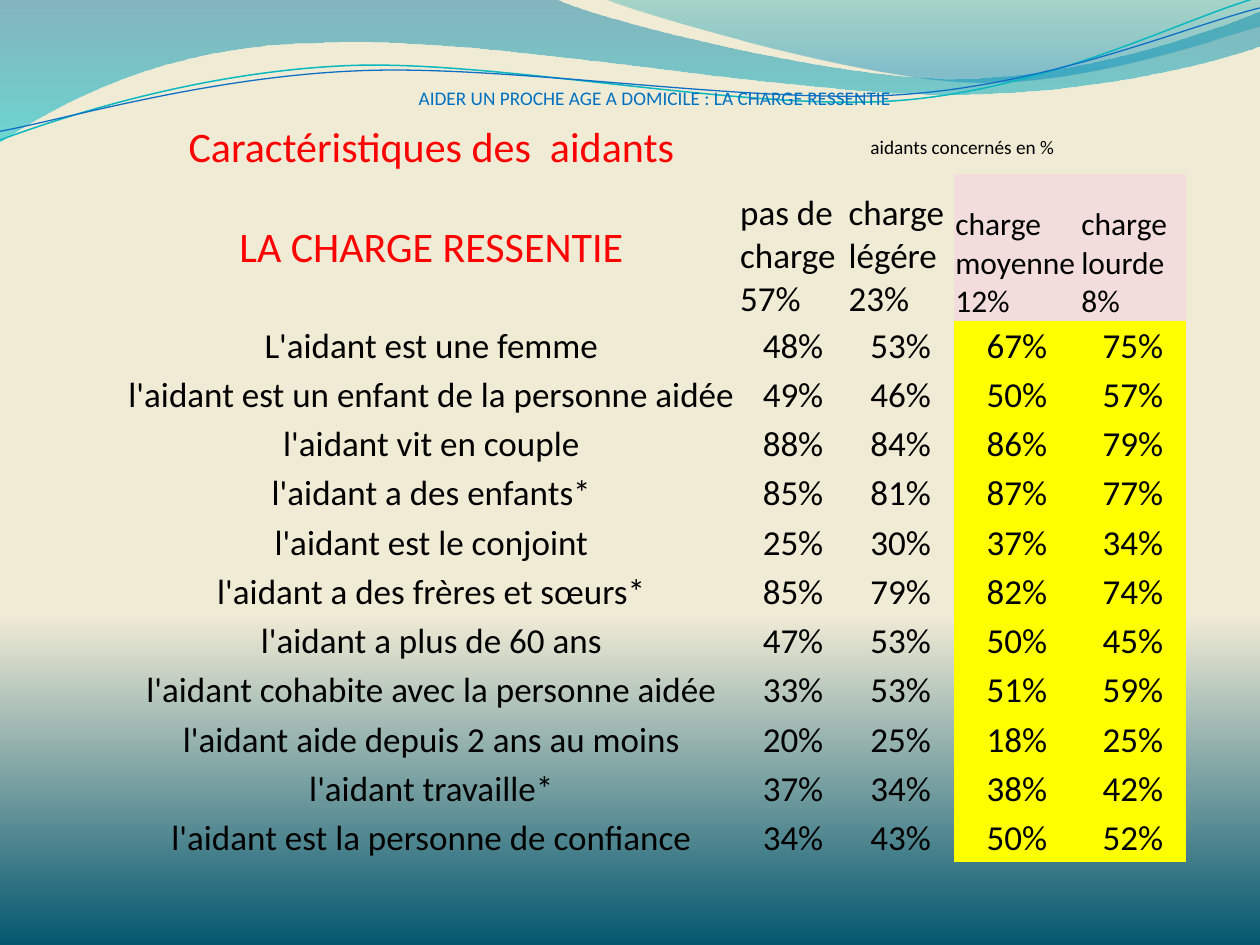
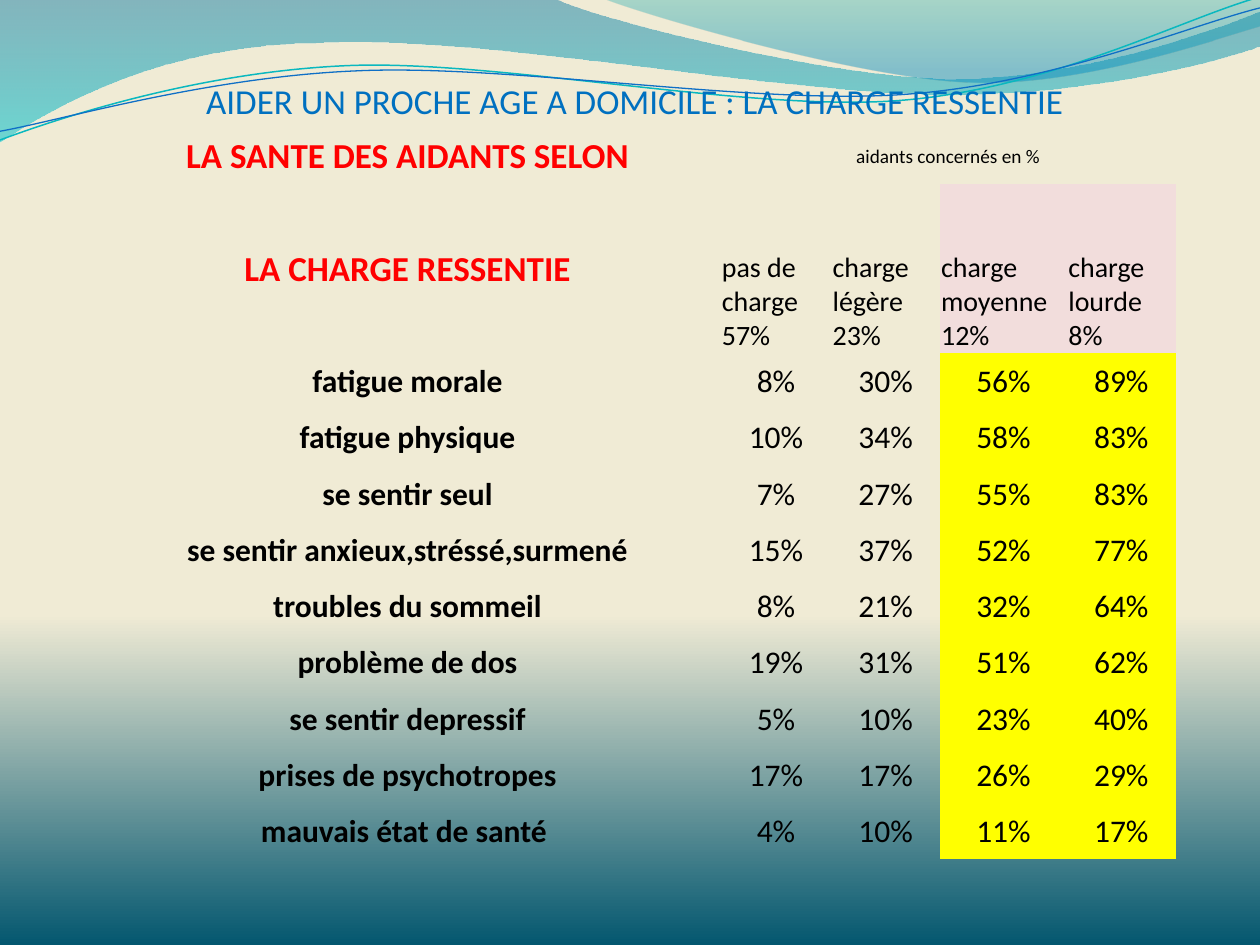
from pptx import Presentation
from pptx import oxml
from pptx.dml.color import RGBColor
from pptx.enum import text as t
from pptx.util import Pt

THEME = {
    "font": "Calibri", "note_size": 11,
    "black": "000000", "title": "0070C0", "heading": "FF0000",
    "header_fill": "F2DDDC", "value_fill": "FFFF00",
    "background": [(0, "F0EBD5", 100), (65, "F0EBD5", 100), (100, "04576F", 100)],
    "wave": [(0, "0074A1", 45), (100, "00C6CF", 55)],
    "fan": [(0, "00A1A9", 30), (80, "008BBF", 45), (100, "008BBF", 45)],
    "upper_line": ("0AB8BF", 0.85), "lower_line": ("0F6FC6", 0.75),
}

TITLE = "AIDER UN PROCHE AGE A DOMICILE : LA CHARGE RESSENTIE"
NOTE = "aidants concernés en %"

TABLES = [
    {
        "left": 70.8, "columns": [351.4, 62, 61, 72, 60.5],
        "rows": (26, 28, 84.3, 28.13), "bold": False,
        "sizes": {"title": 11, "heading": 24, "headers": [20, 20, 18, 18], "body": 20},
        "headings": ["Caractéristiques des  aidants", "LA CHARGE RESSENTIE"],
        "headers": ["pas de charge 57%", "charge légére 23%",
                    "charge moyenne 12%", "charge lourde 8%"],
        "body": [
            ("L'aidant est une femme", 48, 53, 67, 75),
            ("l'aidant est un enfant de la personne aidée", 49, 46, 50, 57),
            ("l'aidant vit en couple", 88, 84, 86, 79),
            ("l'aidant a des enfants*", 85, 81, 87, 77),
            ("l'aidant est le conjoint", 25, 30, 37, 34),
            ("l'aidant a des frères et sœurs*", 85, 79, 82, 74),
            ("l'aidant a plus de 60 ans", 47, 53, 50, 45),
            ("l'aidant cohabite avec la personne aidée", 33, 53, 51, 59),
            ("l'aidant aide depuis 2 ans au moins", 20, 25, 18, 25),
            ("l'aidant travaille*", 37, 34, 38, 42),
            ("l'aidant est la personne de confiance", 34, 43, 50, 52),
        ],
    },
    {
        "left": 54, "columns": [357.8, 63.3, 62, 72.7, 62],
        "rows": (30, 32.2, 96.4, 32.15), "bold": True,
        "sizes": {"title": 20, "heading": 20, "headers": [16] * 4, "body": 18},
        "headings": ["LA SANTE DES AIDANTS SELON", "LA CHARGE RESSENTIE"],
        "headers": ["pas de charge 57%", "charge légère 23%",
                    "charge moyenne 12%", "charge lourde 8%"],
        "body": [
            ("fatigue morale", 8, 30, 56, 89),
            ("fatigue physique", 10, 34, 58, 83),
            ("se sentir seul", 7, 27, 55, 83),
            ("se sentir anxieux,stréssé,surmené", 15, 37, 52, 77),
            ("troubles du sommeil", 8, 21, 32, 64),
            ("problème de dos", 19, 31, 51, 62),
            ("se sentir depressif", 5, 10, 23, 40),
            ("prises de psychotropes", 17, 17, 26, 29),
            ("mauvais état de santé ", 4, 10, 11, 17),
        ],
    },
]
TABLE_TOP = 43.2

BANDS = [
    ("wave", [(0, -0.7), (317, -0.7), (343, 12, 478, 45, 546, 45),
              (614, 45, 690, 19, 720, 6.5), (720.7, 26), (708, 32, 626, 55, 537, 54),
              (447, 54, 275, 20, 185, 24.5), (93, 25, 33, 60, -0.7, 81.4)]),
    ("fan", [(345, -0.7), (366, 8, 491, 45, 554, 47), (616, 49.7, 692, 23, 720, 15), (720, 0)]),
    ("upper_line", [(0, 80), (35, 67, 114, 41, 199, 37.5), (284, 34, 427, 64, 513, 57.5),
                    (600, 51, 675, 11, 719, -1.5)]),
    ("lower_line", [(0, 75), (34, 69, 118, 44, 204, 40.5), (290, 36.5, 430, 60, 516, 54),
                    (602, 48, 678, 15, 720, 4.5)]),
]


def color(name):
    return RGBColor.from_string(THEME[name])


def apply(target, values):
    for name, value in values.items():
        setattr(target, name, value)


def write(cell, text, size, color_name="black", bold=False, align=t.PP_ALIGN.CENTER):
    paragraph = cell.text_frame.paragraphs[0]
    paragraph.alignment = align
    run = paragraph.add_run()
    run.text = text
    apply(run.font, {"name": THEME["font"], "size": Pt(size), "bold": bold})
    run.font.color.rgb = color(color_name)


def set_gradient(fill, element, stops):
    fill.gradient()
    gradient = element.xpath(".//a:gradFill")[0]
    gradient.clear()
    stop_xml = "".join(
        f'<a:gs pos="{position * 1000}"><a:srgbClr val="{value}">'
        f'<a:alpha val="{alpha * 1000}"/></a:srgbClr></a:gs>'
        for position, value, alpha in stops)
    namespace = oxml.ns.nsdecls("a")
    gradient.append(oxml.parse_xml(f"<a:gsLst {namespace}>{stop_xml}</a:gsLst>"))
    gradient.append(oxml.parse_xml(f'<a:lin {namespace} ang="5400000" scaled="0"/>'))


def draw_outline(slide, segments, close):
    points = [(Pt(x), Pt(y)) for segment in segments
              for x, y in zip(segment[::2], segment[1::2])]
    builder = slide.shapes.build_freeform(*points[0], scale=1.0)
    builder.add_line_segments(points[1:], close=close)
    shape = builder.convert_to_shape()
    steps = iter(shape.element.xpath(".//a:path/a:lnTo"))
    for segment in segments[1:]:
        group = [next(steps) for _ in range(len(segment) // 2)]
        if len(group) == 3:
            curve = oxml.parse_xml(f'<a:cubicBezTo {oxml.ns.nsdecls("a")}/>')
            group[0].addprevious(curve)
            for step in group:
                curve.append(step[0])
                step.getparent().remove(step)
    return shape


def decorate_master(master, slide):
    set_gradient(master.background.fill, master.element, THEME["background"])
    for number, (name, segments) in enumerate(BANDS, start=20):
        is_line = name.endswith("line")
        shape = draw_outline(slide, segments, close=not is_line)
        shape.shadow.inherit = False
        if is_line:
            value, width = THEME[name]
            shape.fill.background()
            shape.line.color.rgb = RGBColor.from_string(value)
            shape.line.width = Pt(width)
        else:
            set_gradient(shape.fill, shape.element, THEME[name])
            shape.line.fill.background()
        shape.element.xpath(".//p:cNvPr")[0].set("id", str(number))
        master.element.cSld.spTree.append(shape.element)


def add_table(slide, data):
    title_row, note_row, header_row, body_row = data["rows"]
    heights = [title_row, note_row, header_row] + [body_row] * len(data["body"])
    frame = slide.shapes.add_table(len(heights), len(data["columns"]), Pt(data["left"]),
                                   Pt(TABLE_TOP), Pt(sum(data["columns"])), Pt(sum(heights)))
    frame.element.xpath(".//a:tableStyleId")[0].text = "{2D5ABB26-0587-4C30-8999-92F81FD0307C}"
    table = frame.table
    apply(table, {"first_row": False, "horz_banding": False})
    for column, width in zip(table.columns, data["columns"]):
        column.width = Pt(width)
    for row, height in zip(table.rows, heights):
        row.height = Pt(height)

    for row in range(len(heights)):
        for column in range(len(data["columns"])):
            cell = table.cell(row, column)
            is_header = row == 2 and column > 0
            anchor = t.MSO_ANCHOR.BOTTOM if is_header else t.MSO_ANCHOR.MIDDLE
            apply(cell, {"margin_left": Pt(0.75), "margin_right": Pt(0.75),
                         "margin_top": Pt(0.75), "margin_bottom": 0,
                         "vertical_anchor": anchor})
            if row >= 2 and column >= 3:
                cell.fill.solid()
                cell.fill.fore_color.rgb = color("header_fill" if row == 2 else "value_fill")
            else:
                cell.fill.background()

    sizes, bold = data["sizes"], data["bold"]
    table.cell(0, 0).merge(table.cell(0, 4))
    table.cell(1, 1).merge(table.cell(1, 4))
    write(table.cell(0, 0), TITLE, sizes["title"], "title")
    write(table.cell(1, 1), NOTE, THEME["note_size"])
    for row, heading in enumerate(data["headings"], start=1):
        write(table.cell(row, 0), heading, sizes["heading"], "heading", bold)
    for column, (header, size) in enumerate(zip(data["headers"], sizes["headers"]), start=1):
        write(table.cell(2, column), header, size, align=t.PP_ALIGN.LEFT)
    for row, (label, *values) in enumerate(data["body"], start=3):
        write(table.cell(row, 0), label, sizes["body"], bold=bold)
        for column, value in enumerate(values, start=1):
            write(table.cell(row, column), f"{value}%", sizes["body"])


def main():
    presentation = Presentation()
    apply(presentation, {"slide_width": Pt(720), "slide_height": Pt(540)})
    for index, data in enumerate(TABLES):
        slide = presentation.slides.add_slide(presentation.slide_layouts[6])
        if index == 0:
            decorate_master(presentation.slide_master, slide)
        add_table(slide, data)
    presentation.save("out.pptx")


if __name__ == "__main__":
    main()
